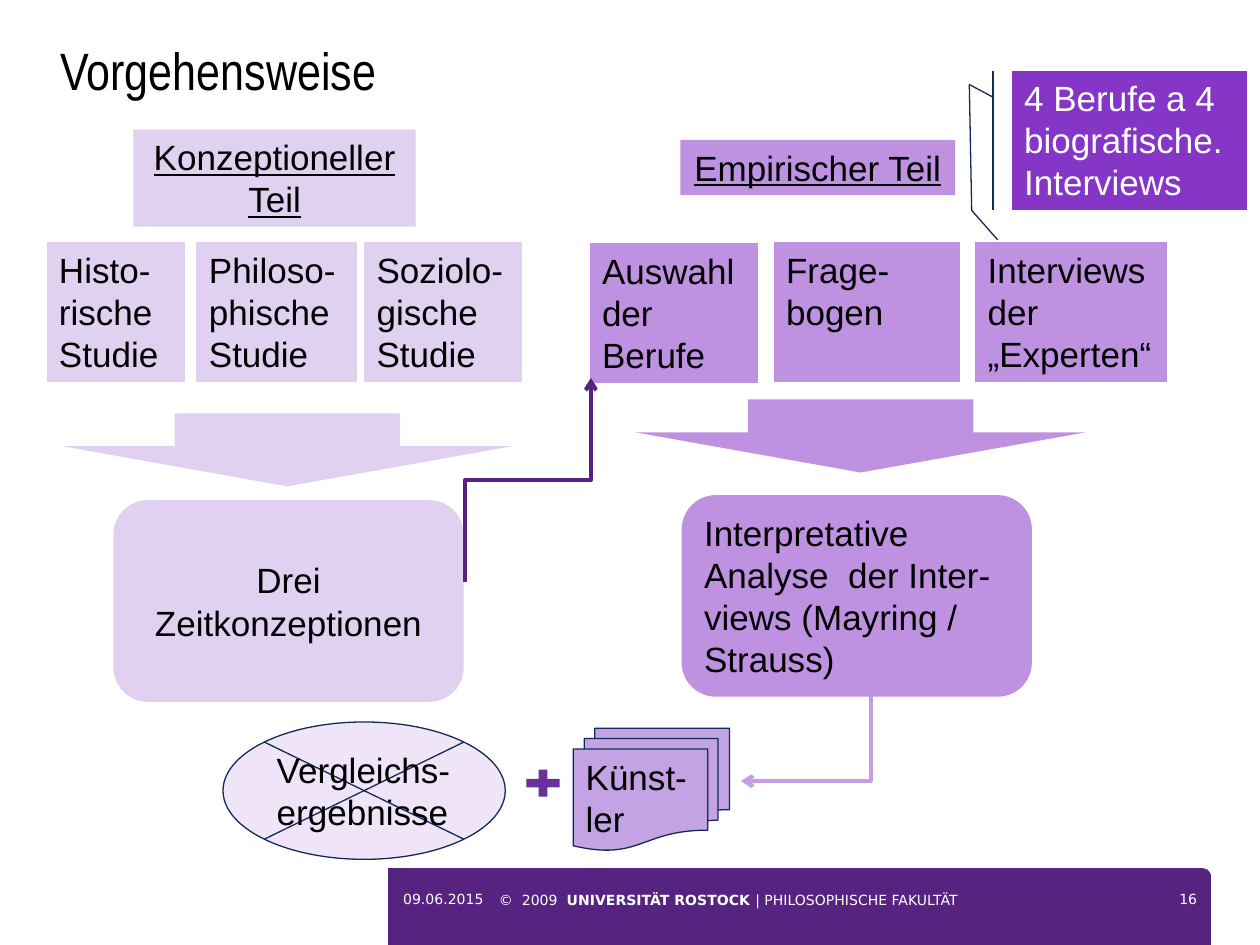
from lxml import etree
from pptx import Presentation
from pptx.dml.color import RGBColor
from pptx.enum import shapes, text
from pptx.oxml.ns import qn
from pptx.util import Inches, Pt

Kind = shapes.MSO_SHAPE
Align = text.PP_ALIGN
Anchor = text.MSO_ANCHOR

LILAC, PURPLE, DARK, NAVY = "E1D1F1", "BE92E1", "572381", "142A56"
INSETS = (0.1, 0.05, 0.1, 0.05)


def color(value):
    """Turn a hex string into a colour."""
    return RGBColor.from_string(value)


def write(frame, runs, size=20, font="Arial", ink="000000", align=Align.LEFT,
          anchor=Anchor.TOP, insets=INSETS, underline=False, wrap=True):
    """Fill a text frame with a string or with (string, bold) runs."""
    frame.word_wrap = wrap
    frame.vertical_anchor = anchor
    (frame.margin_left, frame.margin_top,
     frame.margin_right, frame.margin_bottom) = map(Inches, insets)
    paragraph = frame.paragraphs[0]
    paragraph.alignment = align
    for index, line in enumerate([runs] if isinstance(runs, str) else [runs]):
        pieces = [(line, False)] if isinstance(line, str) else line
        for words, bold in pieces:
            for part, chunk in enumerate(words.split("\n")):
                if part:
                    paragraph.add_line_break()
                run = paragraph.add_run()
                run.text = chunk
                run.font.name, run.font.size = font, Pt(size)
                run.font.bold, run.font.underline = bold, underline
                run.font.color.rgb = color(ink)


def paint(shape, fill, line=None):
    """Give a shape a flat fill and an optional thin outline."""
    shape.shadow.inherit = False
    shape.fill.solid()
    shape.fill.fore_color.rgb = color(fill)
    if line:
        shape.line.color.rgb = color(line)
        shape.line.width = Pt(0.75)
    else:
        shape.line.fill.background()


def add_block(slide, kind, box, fill, words=None, line=None, adjust=(), **style):
    """Add a preset shape, with text if there is any."""
    block = slide.shapes.add_shape(kind, *map(Inches, box))
    paint(block, fill, line)
    for index, value in enumerate(adjust):
        block.adjustments[index] = value
    if words:
        write(block.text_frame, words, **style)


def add_label(slide, box, words, **style):
    """Add a text box."""
    label = slide.shapes.add_textbox(*map(Inches, box))
    write(label.text_frame, words, **style)


def add_elbow(slide, start, end, ink, preset):
    """Add a bent arrow that leaves its start vertically."""
    mid_x, mid_y = (start[0] + end[0]) / 2, (start[1] + end[1]) / 2
    turned = [Inches(length) for x, y in (start, end)
              for length in (mid_x + y - mid_y, mid_y - x + mid_x)]
    elbow = slide.shapes.add_connector(shapes.MSO_CONNECTOR.ELBOW, *turned)
    elbow.line.color.rgb = color(ink)
    elbow.line.width = Pt(2.25)
    properties = elbow._element.spPr
    properties.find(qn("a:xfrm")).set("rot", str(90 * 60000))
    properties.find(qn("a:prstGeom")).set("prst", preset)
    outline = properties.find(qn("a:ln"))
    etree.SubElement(outline, qn("a:tailEnd")).set("type", "arrow")
    etree.SubElement(properties, qn("a:effectLst"))


def add_footer(slide):
    """Add the footer band with date, faculty and page number."""
    corner = [(9.51, 6.89), (9.55, 6.89), (9.58, 6.9), (9.6, 6.92), (9.61, 6.94)]
    outline = slide.shapes.build_freeform(Inches(3.08), Inches(6.89))
    outline.add_line_segments(
        [(Inches(x), Inches(y)) for x, y in corner + [(9.61, 7.5), (3.08, 7.5)]])
    paint(outline.convert_to_shape(), DARK)
    small = dict(size=8, font="DejaVu Sans", ink="FFFFFF")
    add_label(slide, (3.2, 7.01, 0.76, 0.29), "09.06.2015",
              anchor=Anchor.MIDDLE, insets=(0, 0, 0, 0.05), **small)
    add_label(slide, (3.96, 7.03, 5.19, 0.27),
              [("©  2009  ", False), ("UNIVERSITÄT ROSTOCK ", True),
               ("| PHILOSOPHISCHE FAKULTÄT", False)],
              insets=(0, 0.05, 0, 0.05), **small)
    add_label(slide, (9.07, 7.01, 0.53, 0.29), "16", align=Align.RIGHT,
              anchor=Anchor.MIDDLE, insets=(0.1, 0, 0.1, 0.05), **small)


def add_results(slide):
    """Add the comparison results and the artists below the two parts."""
    add_elbow(slide, (6.91, 5.36), (5.88, 6.2), "C49DE4", "bentConnector2")
    add_block(slide, Kind.FLOWCHART_MULTIDOCUMENT, (4.55, 5.78, 1.24, 0.97),
              "C3A3E3", "Künst-ler", NAVY)
    add_block(slide, Kind.FLOWCHART_SUMMING_JUNCTION, (1.77, 5.73, 2.24, 1.09),
              "EFE4F8", "Vergleichs-\nergebnisse", NAVY)
    add_block(slide, Kind.MATH_PLUS, (4.13, 6.07, 0.36, 0.29), "69319F")


def add_part(slide, fill, heading, heading_box, studies, arrow_at,
             outcome, outcome_at, wrap=True, **outcome_style):
    """Add a heading, its studies, the arrow and the outcome."""
    add_block(slide, Kind.RECTANGLE, heading_box, fill, heading,
              align=Align.CENTER, underline=True, wrap=wrap)
    for left, top, width, words in studies:
        add_block(slide, Kind.FLOWCHART_PROCESS, (left, top, width, 1.11),
                  fill, words)
    add_block(slide, Kind.DOWN_ARROW, (*arrow_at, 3.58, 0.58), fill,
              adjust=(0.5, 0.55))
    add_block(slide, Kind.ROUNDED_RECTANGLE, (*outcome_at, 2.78, 1.6), fill,
              outcome, adjust=(0.17,), **outcome_style)


def main():
    """Build and save the slide."""
    deck = Presentation()
    deck.slide_width, deck.slide_height = Inches(10), Inches(7.5)
    slide = deck.slides.add_slide(deck.slide_layouts[6])
    add_footer(slide)
    add_label(slide, (0.48, 0.3, 9.1, 0.4), "Vorgehensweise", size=30,
              font="Arial Narrow", insets=(0, 0, 0, 0))
    add_results(slide)
    add_part(slide, PURPLE, "Empirischer Teil", (5.4, 1.11, 2.18, 0.44),
             [(4.68, 1.93, 1.34, "Auswahl der Berufe"),
              (6.14, 1.92, 1.48, "Frage-bogen"),
              (7.74, 1.92, 1.52, "Interviews der „Experten“")],
             (5.04, 3.17),
             "Interpretative Analyse  der Inter-views (Mayring / Strauss)",
             (5.41, 3.93), wrap=False)
    add_part(slide, LILAC, "Konzeptioneller\nTeil", (1.06, 1.03, 2.24, 0.77),
             [(0.37, 1.92, 1.1, "Histo-\nrische\nStudie"),
              (1.56, 1.92, 1.27, "Philoso-phische Studie"),
              (2.89, 1.92, 1.25, "Soziolo- gische\nStudie")],
             (0.49, 3.28), "Drei Zeitkonzeptionen", (0.9, 3.97),
             align=Align.CENTER, anchor=Anchor.MIDDLE)
    add_block(slide, Kind.LINE_CALLOUT_3_ACCENT_BAR, (8.03, 0.56, 1.87, 1.11),
              "8536C6", "4 Berufe a 4 biografische. Interviews", NAVY,
              adjust=(0.19, -0.08, 0.1, -0.18, 1, -0.17, 1.21, -0.06),
              ink="FFFFFF")
    add_elbow(slide, (3.69, 4.62), (4.69, 3), DARK, "bentConnector3")
    deck.save("out.pptx")


if __name__ == "__main__":
    main()
